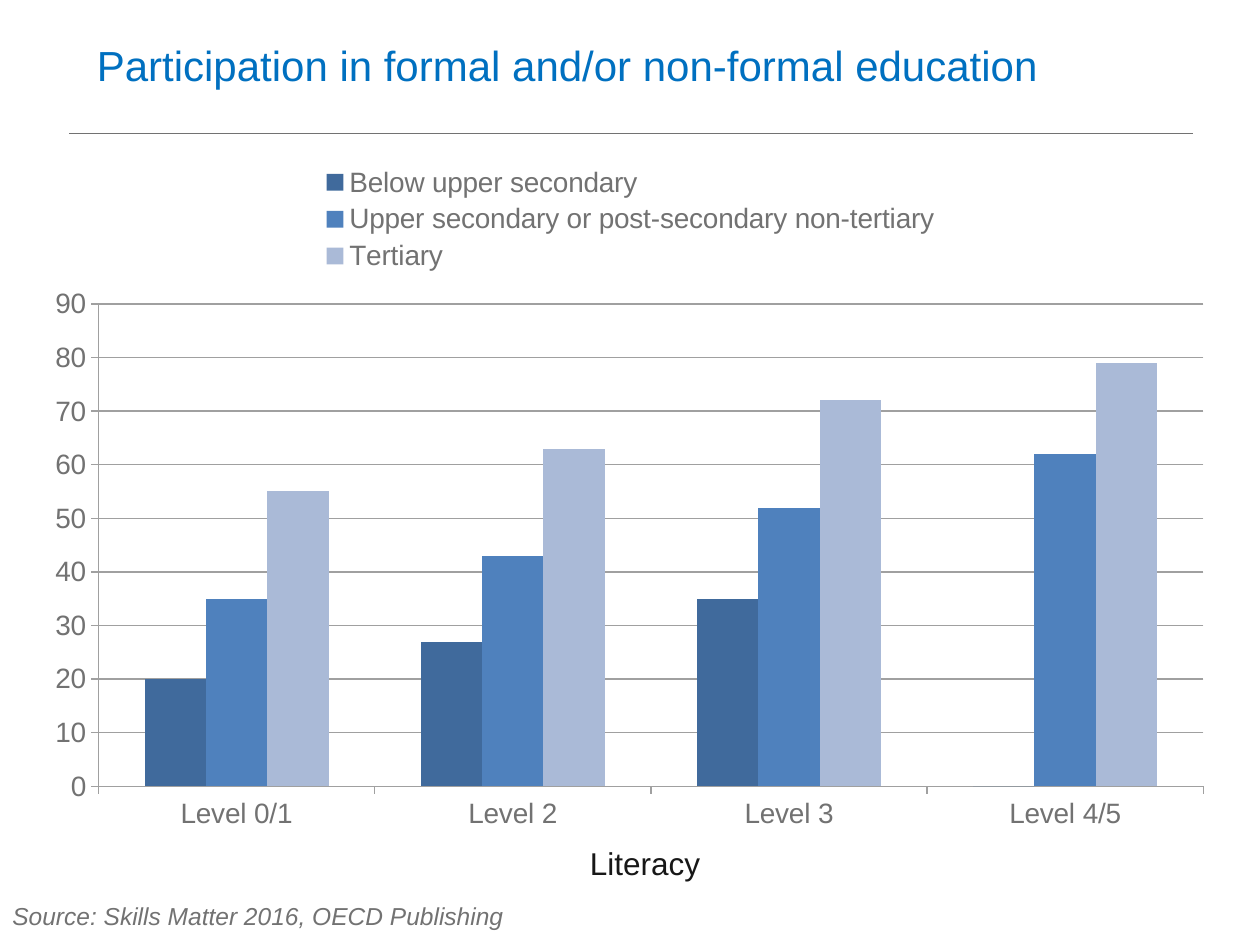
"""Build a slide charting participation in education by literacy level."""
from lxml.etree import SubElement
from pptx import Presentation
from pptx.chart.data import CategoryChartData
from pptx.dml.color import RGBColor
from pptx.enum.chart import XL_CHART_TYPE, XL_LEGEND_POSITION, XL_TICK_MARK
from pptx.enum.shapes import MSO_CONNECTOR
from pptx.enum.text import MSO_ANCHOR, PP_ALIGN
from pptx.oxml.ns import qn
from pptx.util import Inches, Pt

FONT = "Arial"
GREY = "727272"
GRID = "A0A0A0"
LEVELS = ["Level 0/1", "Level 2", "Level 3", "Level 4/5"]
SERIES = [
    ("Below upper secondary", (20, 27, 35, 0), "406A9C"),
    ("Upper secondary or post-secondary non-tertiary", (35, 43, 52, 62), "4F81BD"),
    ("Tertiary", (55, 63, 72, 79), "AABAD7"),
]
CHART_BOX = (0.26, 1.22, 9.49, 5.47)
PLOT_LAYOUT = (0.055, 0.218, 0.924, 0.7)
LEGEND_LAYOUT = (0.24, 0.01, 0.52, 0.17)
TEXTS = [
    ("Participation in formal and/or non-formal education", (0.67, 0.02, 8.82, 0.99),
     24, "0070C0", False, PP_ALIGN.LEFT, MSO_ANCHOR.MIDDLE),
    ("Source: Skills Matter 2016, OECD Publishing", (0, 7.1, 6.3, 0.34),
     14, GREY, True, PP_ALIGN.LEFT, MSO_ANCHOR.TOP),
    ("Literacy", (3.74, 6.65, 2.76, 0.4),
     18, "171717", False, PP_ALIGN.CENTER, MSO_ANCHOR.TOP),
]


def color(value):
    return RGBColor.from_string(value)


def add_text(slide, text, box, size, fill, italic, align, anchor):
    tf = slide.shapes.add_textbox(*map(Inches, box)).text_frame
    tf.word_wrap = True
    tf.vertical_anchor = anchor
    p = tf.paragraphs[0]
    p.alignment = align
    r = p.add_run()
    r.text = text
    r.font.name, r.font.size, r.font.italic = FONT, Pt(size), italic
    r.font.color.rgb = color(fill)


def add_rule(slide):
    line = slide.shapes.add_connector(
        MSO_CONNECTOR.STRAIGHT, Inches(0.55), Inches(1.06), Inches(9.47), Inches(1.06))
    line.line.color.rgb = color(GREY)
    line.line.width = Pt(0.5)
    SubElement(line._element.spPr, qn("a:effectLst"))


def set_layout(parent, after, box, inner=False):
    for old in parent.findall(qn("c:layout")):
        parent.remove(old)
    layout = SubElement(parent, qn("c:layout"))
    if after is None:
        parent.insert(0, layout)
    else:
        after.addnext(layout)
    manual = SubElement(layout, qn("c:manualLayout"))
    items = [("layoutTarget", "inner")] if inner else []
    items += [("xMode", "edge"), ("yMode", "edge")]
    items += zip("xywh", map(str, box))
    for tag, value in items:
        SubElement(manual, qn(f"c:{tag}")).set("val", value)


def add_chart(slide):
    data = CategoryChartData(number_format="0")
    data.categories = LEVELS
    for name, values, _ in SERIES:
        data.add_series(name, values)
    chart = slide.shapes.add_chart(
        XL_CHART_TYPE.COLUMN_CLUSTERED, *map(Inches, CHART_BOX), data).chart
    chart.has_title = False
    chart.font.name, chart.font.size = FONT, Pt(16)
    chart.font.color.rgb = color(GREY)

    plot = chart.plots[0]
    plot.gap_width, plot.overlap = 150, 0
    plot.vary_by_categories = False
    for series, (_, _, fill) in zip(plot.series, SERIES):
        series.format.fill.solid()
        series.format.fill.fore_color.rgb = color(fill)

    for axis in (chart.category_axis, chart.value_axis):
        axis.major_tick_mark = XL_TICK_MARK.OUTSIDE
        axis.minor_tick_mark = XL_TICK_MARK.NONE
        axis.format.line.color.rgb = color(GRID)
    value_axis = chart.value_axis
    value_axis.minimum_scale, value_axis.maximum_scale = 0, 90
    value_axis.major_unit = 10
    value_axis.has_major_gridlines = True
    value_axis.major_gridlines.format.line.color.rgb = color(GRID)
    value_axis.tick_labels.number_format = "0"
    value_axis.tick_labels.number_format_is_linked = False

    chart.has_legend = True
    legend = chart.legend
    legend.position = XL_LEGEND_POSITION.TOP
    legend.include_in_layout = False
    legend_xml = legend._element
    set_layout(legend_xml, legend_xml.find(qn("c:legendPos")), LEGEND_LAYOUT)
    plot_area = chart._chartSpace.find(qn("c:chart")).find(qn("c:plotArea"))
    set_layout(plot_area, None, PLOT_LAYOUT, inner=True)


def main():
    prs = Presentation()
    prs.slide_width, prs.slide_height = Inches(10), Inches(7.5)
    s = prs.slides.add_slide(prs.slide_layouts[6])
    add_rule(s)
    add_chart(s)
    for item in TEXTS:
        add_text(s, *item)
    prs.save("out.pptx")


if __name__ == "__main__":
    main()
